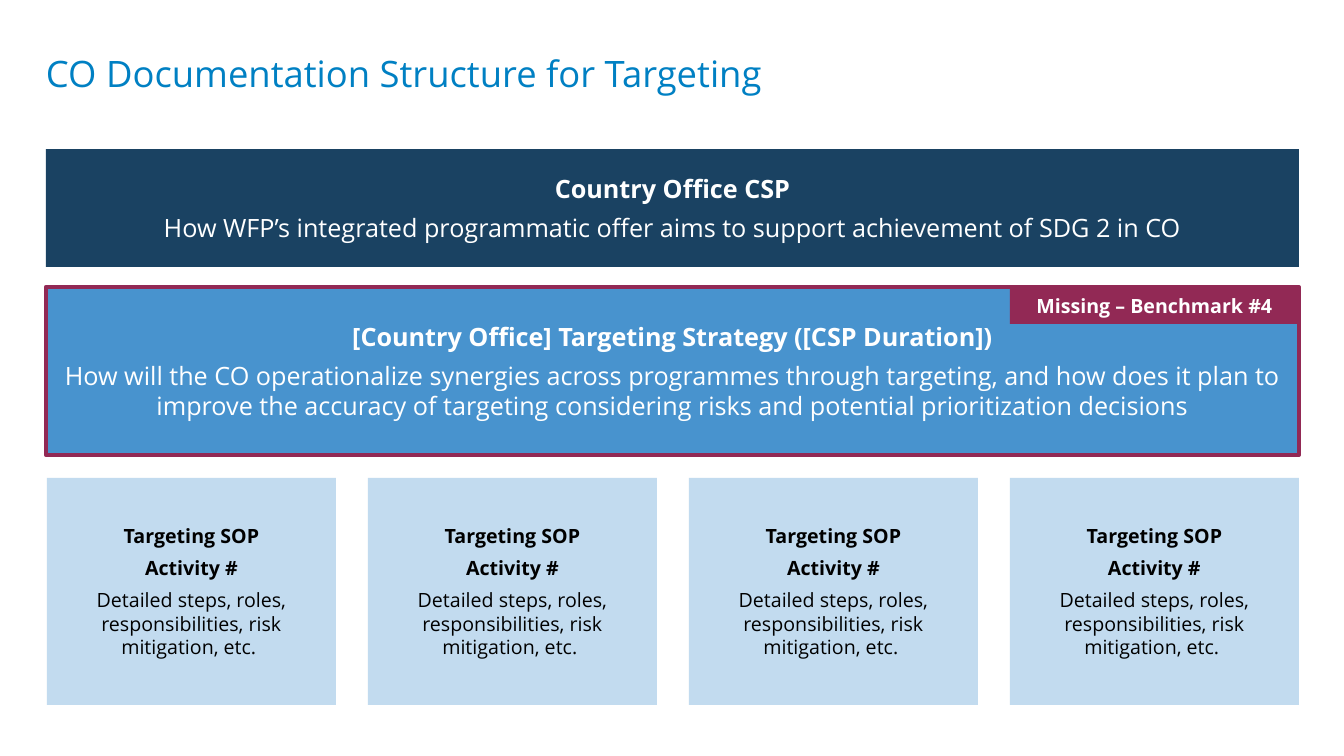
from dataclasses import dataclass

from pptx import Presentation
from pptx.dml.color import RGBColor as RGB
from pptx.enum.shapes import MSO_SHAPE as Shape
from pptx.enum.text import MSO_ANCHOR as Anchor, PP_ALIGN as Align
from pptx.util import Pt

EMU_PER_PX = 914400 / 100.8


@dataclass(frozen=True)
class Theme:
    font: str = "Open Sans"
    title: RGB = RGB(0x00, 0x80, 0xC3)
    navy: RGB = RGB(0x1A, 0x42, 0x62)
    blue: RGB = RGB(0x48, 0x93, 0xCE)
    pale: RGB = RGB(0xC2, 0xDB, 0xEF)
    alert: RGB = RGB(0x92, 0x29, 0x55)
    white: RGB = RGB(0xFF, 0xFF, 0xFF)
    black: RGB = RGB(0x00, 0x00, 0x00)
    title_size: int = 26
    band_size: int = 18
    card_size: int = 14


theme = Theme()


def px(*lengths):
    return [round(length * EMU_PER_PX) for length in lengths]


def add_box(place, fill, color, size, headings, detail=None):
    """Add a filled rectangle with bold headings and an optional plain detail line."""
    box = page.shapes.add_shape(Shape.RECTANGLE, *px(*place))
    box.shadow.inherit = False
    box.fill.solid()
    box.fill.fore_color.rgb = fill
    box.line.fill.background()
    frame = box.text_frame
    frame.word_wrap = True
    frame.vertical_anchor = Anchor.MIDDLE
    lines = headings + ([detail] if detail else [])
    frame.text = "\n".join(lines)
    for index, para in enumerate(frame.paragraphs):
        para.alignment = Align.CENTER
        if detail:
            para.space_after = Pt(6)
        font = para.runs[0].font
        font.name, font.size = theme.font, Pt(size)
        font.color.rgb = color
        font.bold = index < len(headings)
    return box


deck = Presentation()
deck.slide_width, deck.slide_height = px(1344, 756)
page = deck.slides.add_slide(deck.slide_layouts[6])

title = page.shapes.add_textbox(*px(46, 51, 1253, 39))
frame = title.text_frame
frame.word_wrap = True
frame.margin_left = frame.margin_top = frame.margin_right = frame.margin_bottom = 0
frame.text = "CO Documentation Structure for Targeting"
font = frame.paragraphs[0].runs[0].font
font.name, font.size = theme.font, Pt(theme.title_size)
font.color.rgb = theme.title

add_box((46, 149, 1253, 118), theme.navy, theme.white, theme.band_size,
        ["Country Office CSP"],
        "How WFP’s integrated programmatic offer aims to support achievement of SDG 2 in CO")

strategy = add_box((46, 287, 1253, 168), theme.blue, theme.white, theme.band_size,
                   ["[Country Office] Targeting Strategy ([CSP Duration])"],
                   "How will the CO operationalize synergies across programmes through targeting, "
                   "and how does it plan to improve the accuracy of targeting considering risks "
                   "and potential prioritization decisions")
strategy.line.color.rgb = theme.alert
strategy.line.width = Pt(3)

CARD_LEFT, CARD_WIDTH, CARD_STEP, CARD_COUNT = 47, 289, 321, 4
for column in range(CARD_COUNT):
    add_box((CARD_LEFT + column * CARD_STEP, 478, CARD_WIDTH, 227),
            theme.pale, theme.black, theme.card_size,
            ["Targeting SOP", "Activity #"],
            "Detailed steps, roles, responsibilities, risk mitigation, etc. ")

last_card_left = CARD_LEFT + (CARD_COUNT - 1) * CARD_STEP
add_box((last_card_left, 287, CARD_WIDTH, 37), theme.alert, theme.white, theme.card_size,
        ["Missing – Benchmark #4"])

deck.save("out.pptx")
